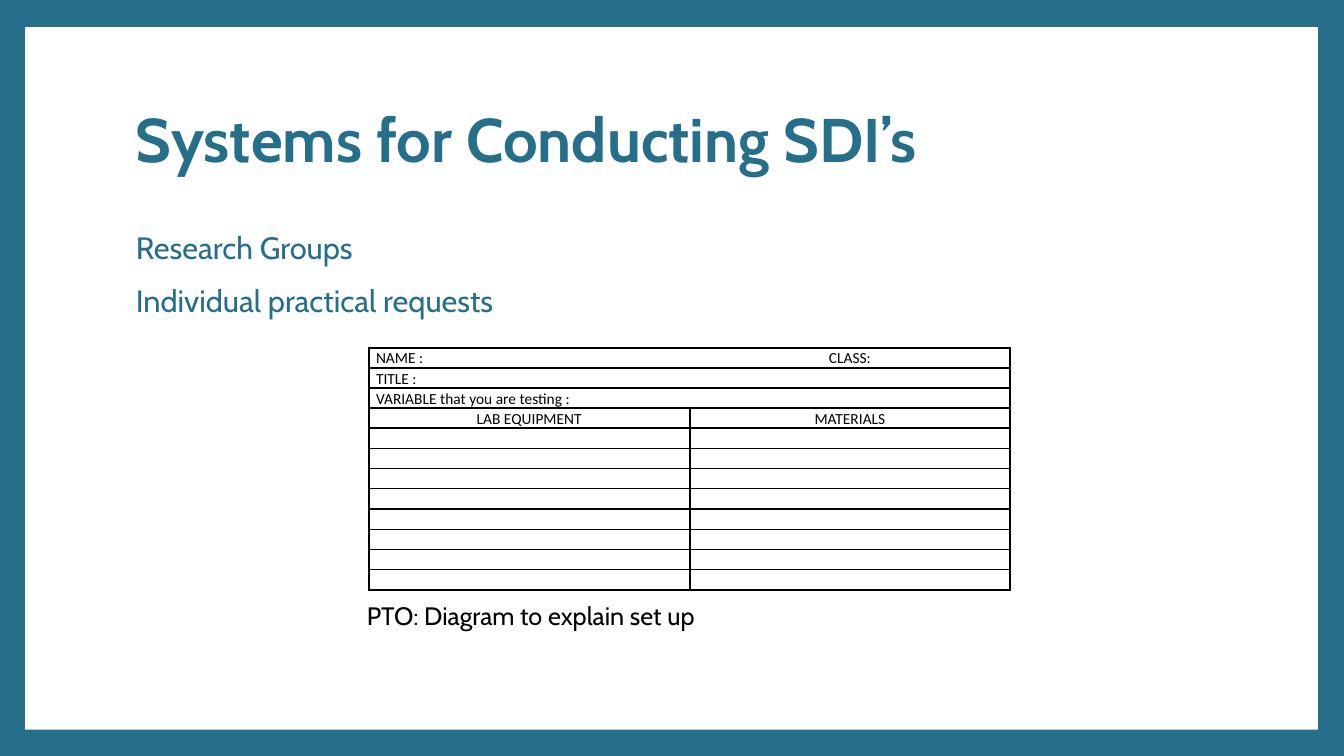
from lxml.etree import SubElement
from pptx import Presentation
from pptx.dml.color import RGBColor
from pptx.enum.shapes import MSO_SHAPE as Shape
from pptx.enum.text import MSO_ANCHOR as Anchor, PP_ALIGN as Align
from pptx.oxml import parse_xml
from pptx.oxml.ns import nsdecls, qn
from pptx.util import Inches, Pt

TEAL, WHITE, BLACK = "266F8B", "FFFFFF", "000000"
EMPTY_ROWS = 8
FORM_ROWS = [
    ("NAME :", "CLASS:"),
    ("TITLE :", ""),
    ("VARIABLE that you are testing :", ""),
    ("LAB EQUIPMENT", "MATERIALS"),
] + [("", "")] * EMPTY_ROWS
CENTERED = {"CLASS:", "LAB EQUIPMENT", "MATERIALS"}
HEADING_ROW = 3  # the columns are divided from this row down


def color(value):
    return RGBColor.from_string(value)


def write(frame, text, font="Cabin", size=18, fill=BLACK, bold=False,
          align=Align.LEFT, spacing=None, before=0):
    """Write one paragraph for each line of text."""
    for index, line in enumerate(text.split("\n")):
        paragraph = frame.add_paragraph() if index else frame.paragraphs[0]
        paragraph.alignment = align
        paragraph.line_spacing = spacing
        paragraph.space_before = Pt(before)
        if not line:
            end = SubElement(paragraph._p, qn("a:endParaRPr"), sz=str(size * 100))
            SubElement(end, qn("a:latin"), typeface=font)
            continue
        run = paragraph.add_run()
        run.text = line
        run.font.name, run.font.size, run.font.bold = font, Pt(size), bold
        run.font.color.rgb = color(fill)


def set_borders(cell, widths):
    """Set borders in points by side (L, R, T, B); zero means no line."""
    properties = cell._tc.get_or_add_tcPr()
    for index, side in enumerate("LRTB"):
        width = widths[side]
        paint = (f'<a:solidFill><a:srgbClr val="{BLACK}"/></a:solidFill>'
                 if width else "<a:noFill/>")
        properties.insert(index, parse_xml(
            f'<a:ln{side} {nsdecls("a")} w="{Pt(width)}">{paint}</a:ln{side}>'))


class SlideBuilder:
    def __init__(self, presentation, background):
        self.slide = presentation.slides.add_slide(presentation.slide_layouts[6])
        fill = self.slide.background.fill
        fill.solid()
        fill.fore_color.rgb = color(background)

    def panel(self, left, top, width, height, fill):
        shape = self.slide.shapes.add_shape(
            Shape.RECTANGLE, Inches(left), Inches(top), Inches(width), Inches(height))
        shape.shadow.inherit = False
        shape.fill.solid()
        shape.fill.fore_color.rgb = color(fill)
        shape.line.fill.background()

    def text(self, left, top, width, height, text, anchor=Anchor.TOP, **style):
        box = self.slide.shapes.add_textbox(
            Inches(left), Inches(top), Inches(width), Inches(height))
        frame = box.text_frame
        frame.word_wrap = True
        frame.vertical_anchor = anchor
        write(frame, text, **style)

    def form(self, left, top, column_width, row_height, rows):
        """Draw the request form as a two-column table."""
        table = self.slide.shapes.add_table(
            len(rows), 2, Inches(left), Inches(top),
            Inches(2 * column_width), Inches(row_height * len(rows))).table
        table.first_row = table.horz_banding = False
        for column in table.columns:
            column.width = Inches(column_width)
        for row_index, texts in enumerate(rows):
            table.rows[row_index].height = Inches(row_height)
            divider = 1.5 if row_index >= HEADING_ROW else 0
            above = 1.5 if row_index <= HEADING_ROW + 1 else 1
            last = row_index == len(rows) - 1
            below = 1.5 if row_index <= HEADING_ROW or last else 1
            for column_index, text in enumerate(texts):
                cell = table.cell(row_index, column_index)
                cell.margin_left = cell.margin_right = Inches(0.07)
                cell.margin_top = cell.margin_bottom = 0
                cell.fill.background()
                write(cell.text_frame, text, font="Calibri", size=11, spacing=1.07,
                      align=Align.CENTER if text in CENTERED else Align.LEFT)
                set_borders(cell, {
                    "L": divider if column_index else 1.5,
                    "R": 1.5 if column_index else divider,
                    "T": above, "B": below})


def main():
    presentation = Presentation()
    presentation.slide_width, presentation.slide_height = Inches(13.33), Inches(7.5)
    builder = SlideBuilder(presentation, TEAL)
    builder.panel(0.25, 0.27, 12.82, 6.97, WHITE)
    builder.text(1.25, 0.67, 10.8, 1.48, "Systems for Conducting SDI’s",
                 anchor=Anchor.MIDDLE, size=44, fill=TEAL, bold=True, spacing=0.9)
    builder.text(1.25, 2.26, 10.8, 4.41,
                 "Research Groups\nIndividual practical requests",
                 size=22, fill=TEAL, spacing=0.9, before=14)
    builder.form(3.66, 3.45, 3.18, 0.2, FORM_ROWS)
    builder.text(3.54, 5.91, 6.36, 0.4, "PTO: Diagram to explain set up")
    presentation.save("out.pptx")


if __name__ == "__main__":
    main()
